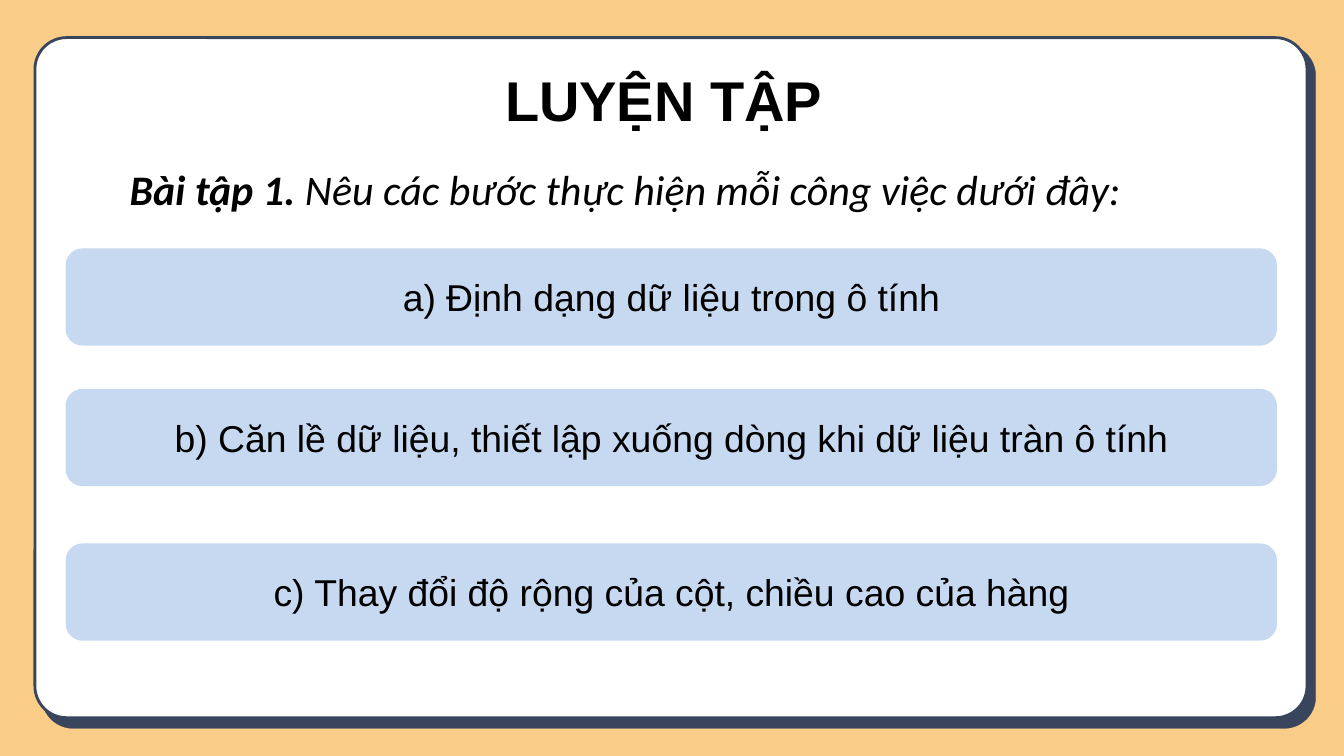
from pptx import Presentation
from pptx.dml.color import RGBColor
from pptx.enum.shapes import MSO_SHAPE
from pptx.enum.text import MSO_ANCHOR, MSO_AUTO_SIZE, PP_ALIGN
from pptx.util import Inches, Pt

ROUNDED = MSO_SHAPE.ROUNDED_RECTANGLE
LEFT, CENTER = PP_ALIGN.LEFT, PP_ALIGN.CENTER
TOP, MIDDLE = MSO_ANCHOR.TOP, MSO_ANCHOR.MIDDLE
TITLE_ONLY = 5

# Content
TITLE = "LUYỆN TẬP "
INSTRUCTION = ("Bài tập 1.\u00a0", "Nêu các bước thực hiện mỗi công việc dưới đây:")
TASKS = [  # top edge, text
    (3.71, "a) Định dạng dữ liệu trong ô tính"),
    (5.8, "b) Căn lề dữ liệu, thiết lập xuống dòng khi dữ liệu tràn ô tính"),
    (8.1, "c) Thay đổi độ rộng của cột, chiều cao của hàng"),
]

# Theme
THEME = {
    "background": "F9CC88", "card": "FFFFFF", "edge": "38455D", "task": "C6D9F1",
    "title": {"name": "Arial", "size": Pt(60), "bold": True, "italic": False},
    "lead": {"name": "Calibri", "size": Pt(45), "bold": True, "italic": True},
    "instruction": {"name": "Calibri", "size": Pt(45), "bold": False, "italic": True},
    "task_text": {"name": "Arial", "size": Pt(40), "bold": False, "italic": False},
}
TEXT_COLOR = RGBColor.from_string("000000")

# Layout: left, top, width, height
CARD_SHADOW = (0.62, 0.66, 18.96, 10.18)
CARD = (0.52, 0.56, 18.93, 10.12)
TITLE_BOX = (4.65, 0.92, 10.67, 1.11)
INSTRUCTION_BOX = (1.83, 2.38, 17, 0.86)
TASK_LEFT, TASK_WIDTH, TASK_HEIGHT = 0.99, 18, 1.42
CARD_RADIUS, TASK_RADIUS = 0.47, 0.24


def add_panel(slide, box, fill, line, line_width, radius):
    shape = slide.shapes.add_shape(ROUNDED, *map(Inches, box))
    shape.adjustments[0] = radius / min(box[2:])
    shape.shadow.inherit = False
    shape.fill.solid()
    shape.fill.fore_color.rgb = RGBColor.from_string(fill)
    shape.line.color.rgb = RGBColor.from_string(line)
    shape.line.width = Pt(line_width)
    return shape


def write_text(shape, runs, alignment, anchor):
    frame = shape.text_frame
    frame.word_wrap = True
    frame.auto_size = MSO_AUTO_SIZE.NONE
    frame.vertical_anchor = anchor
    paragraph = frame.paragraphs[0]
    paragraph.alignment = alignment
    for text, style in runs:
        run = paragraph.add_run()
        run.text = text
        run.font.color.rgb = TEXT_COLOR
        for attribute, value in THEME[style].items():
            setattr(run.font, attribute, value)


def main():
    presentation = Presentation()
    presentation.slide_width, presentation.slide_height = Inches(20), Inches(11.25)
    slide = presentation.slides.add_slide(presentation.slide_layouts[TITLE_ONLY])
    slide.background.fill.solid()
    slide.background.fill.fore_color.rgb = RGBColor.from_string(THEME["background"])

    # Card with its offset shadow
    add_panel(slide, CARD_SHADOW, THEME["edge"], THEME["edge"], 0.25, CARD_RADIUS)
    add_panel(slide, CARD, THEME["card"], THEME["edge"], 3, CARD_RADIUS)

    # Title, brought in front of the card
    title = slide.shapes.title
    title.left, title.top, title.width, title.height = map(Inches, TITLE_BOX)
    title.element.getparent().append(title.element)
    write_text(title, [(TITLE, "title")], CENTER, TOP)

    # Instruction
    instruction = slide.shapes.add_textbox(*map(Inches, INSTRUCTION_BOX))
    write_text(instruction, zip(INSTRUCTION, ("lead", "instruction")), LEFT, TOP)

    # Tasks
    for top, text in TASKS:
        box = (TASK_LEFT, top, TASK_WIDTH, TASK_HEIGHT)
        task = add_panel(slide, box, THEME["task"], THEME["task"], 2, TASK_RADIUS)
        write_text(task, [(text, "task_text")], CENTER, MIDDLE)

    presentation.save("out.pptx")


if __name__ == "__main__":
    main()
